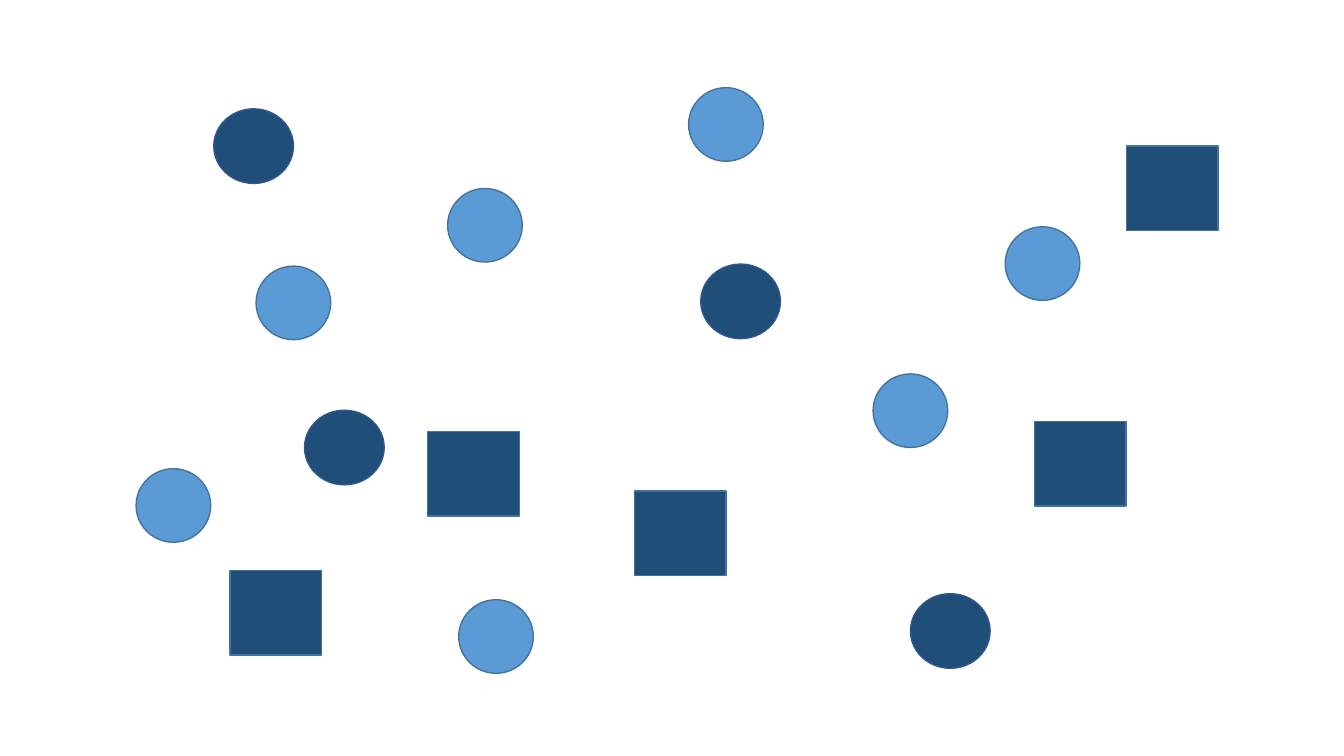
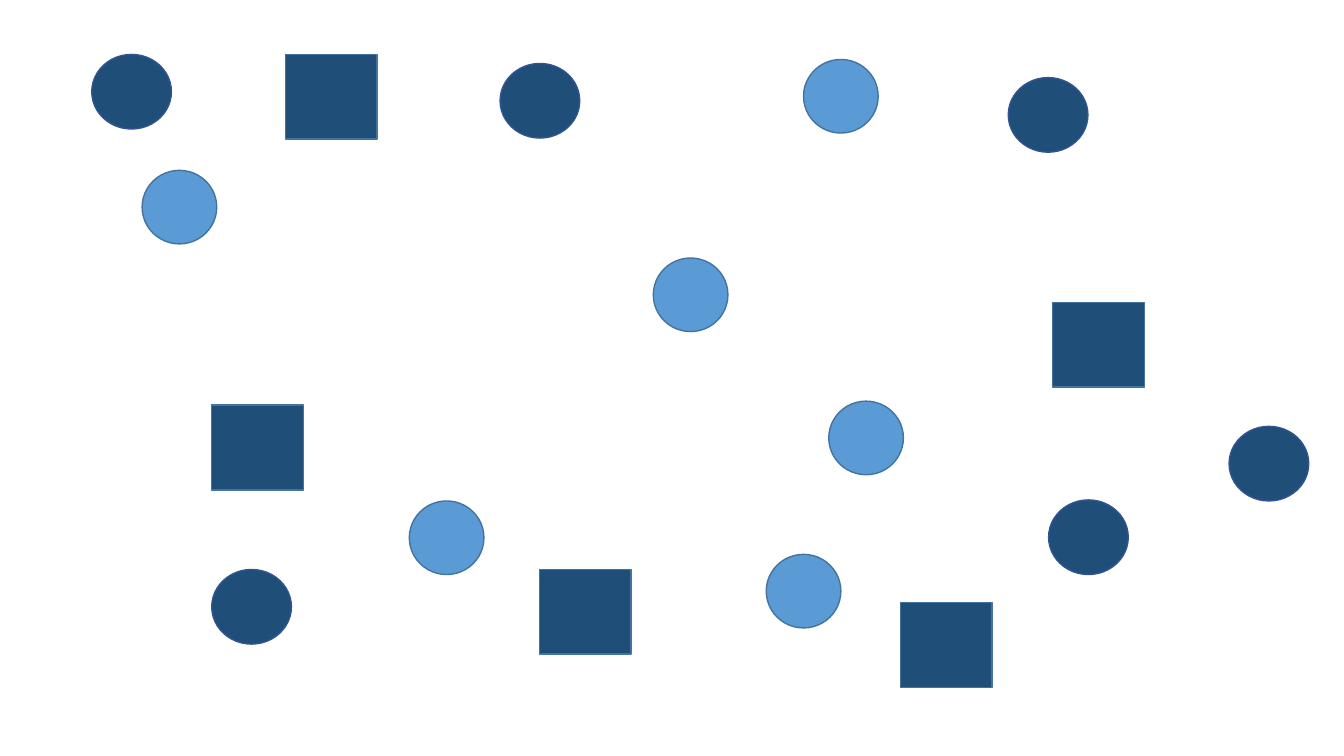
from pptx import Presentation
from pptx.dml.color import RGBColor
from pptx.enum.shapes import MSO_SHAPE
from pptx.util import Inches, Pt

LIGHT_BLUE = RGBColor(0x5B, 0x9B, 0xD5)
DARK_BLUE = RGBColor(0x1F, 0x4E, 0x79)
STEEL_OUTLINE = RGBColor(0x43, 0x73, 0x9E)
NAVY_OUTLINE = RGBColor(0x32, 0x54, 0x91)

# Left and top of every figure, in inches, slide by slide
SCATTERS = [
    {
        "light_circles": [(2.54, 2.64), (9.97, 2.25), (8.66, 3.71), (4.55, 5.95),
                          (1.35, 4.65), (6.83, 0.87), (4.44, 1.87)],
        "dark_circles": [(3.02, 4.07), (9.03, 5.89), (6.95, 2.62), (2.12, 1.08)],
        "squares": [(2.28, 5.66), (6.29, 4.87), (10.26, 4.18), (11.17, 1.45),
                    (4.24, 4.28)],
    },
    {
        "light_circles": [(1.41, 1.69), (4.06, 4.97), (7.6, 5.5), (8.22, 3.98),
                          (7.97, 0.59), (6.48, 2.56)],
        "dark_circles": [(10.4, 4.96), (0.91, 0.54), (4.96, 0.63), (10, 0.77),
                         (2.1, 5.65), (12.19, 4.23)],
        "squares": [(2.83, 0.54), (2.1, 4.02), (10.44, 3), (5.35, 5.65),
                    (8.93, 5.98)],
    },
]


class ScatterDeck:
    """Holds the shared figure style and the current slide."""

    def __init__(self):
        self.presentation = Presentation()
        self.presentation.slide_width = Inches(13.33)
        self.presentation.slide_height = Inches(7.5)
        self.slide = None

    def new_slide(self):
        blank_layout = self.presentation.slide_layouts[6]
        self.slide = self.presentation.slides.add_slide(blank_layout)

    def figure(self, preset, position, size, fill, outline):
        left, top = position
        width, height = size
        shape = self.slide.shapes.add_shape(
            preset, Inches(left), Inches(top), Inches(width), Inches(height))
        shape.shadow.inherit = False
        shape.fill.solid()
        shape.fill.fore_color.rgb = fill
        shape.line.color.rgb = outline
        shape.line.width = Pt(1)

    def light_circle(self, position):
        self.figure(MSO_SHAPE.OVAL, position, (0.74, 0.73), LIGHT_BLUE, STEEL_OUTLINE)

    def dark_circle(self, position):
        self.figure(MSO_SHAPE.OVAL, position, (0.79, 0.74), DARK_BLUE, NAVY_OUTLINE)

    def square(self, position):
        self.figure(MSO_SHAPE.RECTANGLE, position, (0.91, 0.84), DARK_BLUE, STEEL_OUTLINE)


def main():
    deck = ScatterDeck()

    # One slide per scatter of figures
    for scatter in SCATTERS:
        deck.new_slide()
        for position in scatter["light_circles"]:
            deck.light_circle(position)
        for position in scatter["dark_circles"]:
            deck.dark_circle(position)
        for position in scatter["squares"]:
            deck.square(position)

    deck.presentation.save("out.pptx")


if __name__ == "__main__":
    main()
